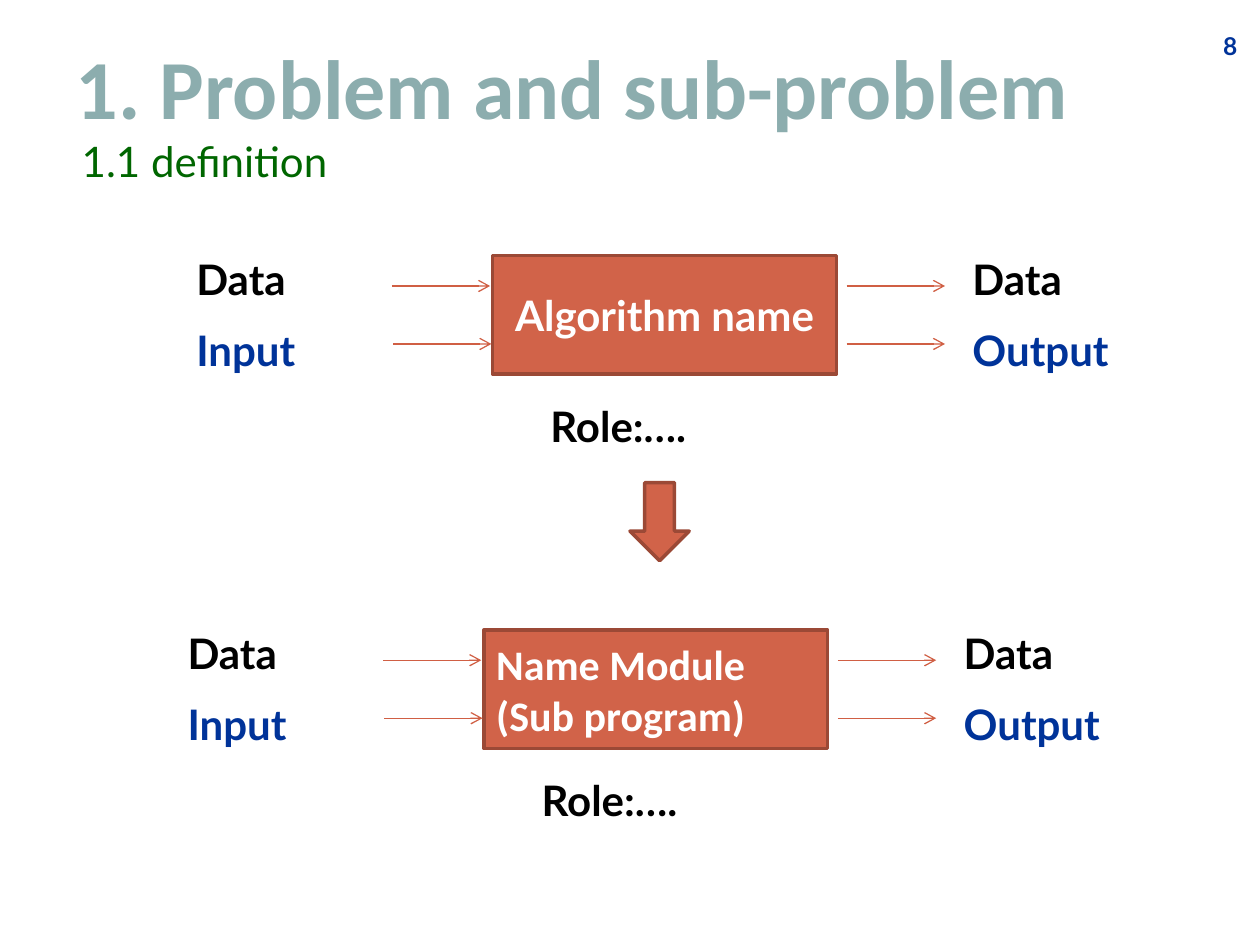
from pptx import Presentation
from pptx.dml.color import RGBColor
from pptx.enum.shapes import MSO_CONNECTOR, MSO_SHAPE
from pptx.enum.text import MSO_ANCHOR, PP_ALIGN
from pptx.oxml.ns import qn
from pptx.util import Inches, Pt
from lxml.etree import SubElement

FILL, BORDER, ARROW = "D16349", "9B4936", "D05F44"
BLACK, BLUE, WHITE = "000000", "003399", "FFFFFF"


def color(value):
    return RGBColor.from_string(value)


def write_text(shape, lines, anchor=MSO_ANCHOR.MIDDLE, wrap=True,
               align=PP_ALIGN.LEFT, font="Lato", size=24, bold=True):
    """Fill a shape with (text, colour) lines."""
    frame = shape.text_frame
    frame.word_wrap = wrap
    frame.vertical_anchor = anchor
    for index, (text, text_color) in enumerate(lines):
        paragraph = frame.add_paragraph() if index else frame.paragraphs[0]
        paragraph.alignment = align
        run = paragraph.add_run()
        run.text = text
        values = {"name": font, "size": Pt(size), "bold": bold}
        for name, value in values.items():
            setattr(run.font, name, value)
        run.font.color.rgb = color(text_color)
    return frame


def add_text(slide, box, lines, **formats):
    shape = slide.shapes.add_textbox(*map(Inches, box))
    return write_text(shape, lines, **formats)


def add_label(slide, box, lines):
    """Add a top-anchored label with a first-line indent."""
    frame = add_text(slide, box, lines, anchor=MSO_ANCHOR.TOP)
    for index, paragraph in enumerate(frame.paragraphs):
        paragraph.line_spacing = 1.2
        paragraph.space_before = Pt(6 if index else 0)
        properties = paragraph._p.get_or_add_pPr()
        properties.set("marL", "0")
        properties.set("indent", str(Inches(0.2)))


def add_block(slide, kind, box):
    shape = slide.shapes.add_shape(kind, *map(Inches, box))
    shape.shadow.inherit = False
    shape.fill.solid()
    shape.fill.fore_color.rgb = color(FILL)
    shape.line.color.rgb = color(BORDER)
    shape.line.width = Pt(2)
    return shape


def add_arrow(slide, left, top, length=0.78):
    connector = slide.shapes.add_connector(
        MSO_CONNECTOR.STRAIGHT, Inches(left), Inches(top),
        Inches(left + length), Inches(top))
    connector.line.color.rgb = color(ARROW)
    connector.line.width = Pt(0.75)
    SubElement(connector.line._get_or_add_ln(), qn("a:tailEnd"), type="arrow")
    SubElement(connector._element.spPr, qn("a:effectLst"))


def add_diagram(slide, left, top, names, **formats):
    """Add a box with input and output arrows, placed by the box corner."""
    block = add_block(slide, MSO_SHAPE.RECTANGLE, (left, top, 2.73, 0.94))
    write_text(block, [(name, WHITE) for name in names], **formats)
    for start, drop in ((-0.8, 0.24), (-0.79, 0.7), (2.81, 0.24), (2.81, 0.7)):
        add_arrow(slide, left + start, top + drop)
    for offset, word in ((-2.65, "Input"), (3.51, "Output")):
        add_label(slide, (left + offset, top - 0.15, 2.33, 1.15),
                  [("Data", BLACK), (word, BLUE)])
    add_label(slide, (left + 0.16, top + 1.02, 2.33, 0.54),
              [("Role:….", BLACK)])


def main():
    presentation = Presentation()
    presentation.slide_width = Inches(10)
    presentation.slide_height = Inches(7.5)
    slide = presentation.slides.add_slide(presentation.slide_layouts[5])

    # Headings and slide number
    title = slide.shapes.title
    place = {"left": 0.5, "top": 0.23, "width": 9.19, "height": 0.91}
    for name, value in place.items():
        setattr(title, name, Inches(value))
    write_text(title, [("1. Problem and sub-problem", "8CADAE")],
               font="Calibri", size=48)
    add_text(slide, (9.61, 0.19, 0.32, 0.34), [("8", BLUE)],
             wrap=False, size=14)
    add_text(slide, (0.55, 1.02, 9.19, 0.51), [("1.1 definition", "006600")],
             bold=False)

    # Algorithm turned into a module
    add_diagram(slide, 3.91, 2.03, ["Algorithm name"], align=PP_ALIGN.CENTER)
    add_diagram(slide, 3.84, 5, ["Name Module", "(Sub program)"],
                font="Calibri")
    add_block(slide, MSO_SHAPE.DOWN_ARROW, (5, 3.83, 0.47, 0.62))

    presentation.save("out.pptx")


if __name__ == "__main__":
    main()
